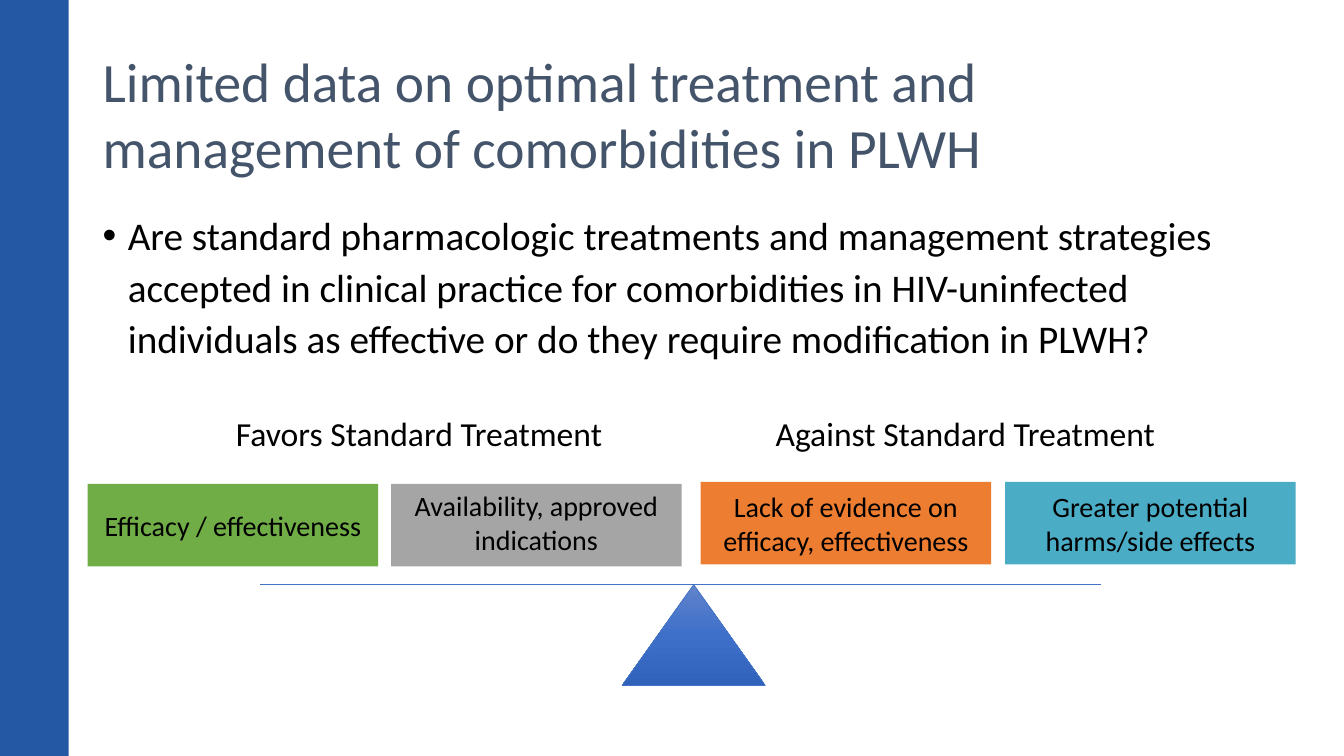
import copy

import pptx
import pptx.util
import pptx.dml.color
import pptx.enum.shapes
import pptx.enum.text
import pptx.oxml.ns
from lxml import etree

PX = 9144  # 100 px to the inch
SHAPES = pptx.enum.shapes.MSO_SHAPE
ANCHOR = pptx.enum.text.MSO_ANCHOR
ALIGN = pptx.enum.text.PP_ALIGN

LABELS = [
    ("Favors Standard Treatment", 178, 475),
    ("Against Standard Treatment", 714, 487),
]
BOXES = [
    ("Efficacy / effectiveness", 87, 480, "70AD47", ANCHOR.MIDDLE),
    ("Availability, approved indications", 388, 480, "A5A5A5", ANCHOR.TOP),
    ("Lack of evidence on efficacy, effectiveness", 695, 478, "ED7D31", ANCHOR.MIDDLE),
    ("Greater potential harms/side effects", 997, 478, "4BACC6", ANCHOR.MIDDLE),
]
STOPS = [(0, "6183CB"), (0.5, "3E70CA"), (1, "3062BB")]


def px(*vals):
    return [pptx.util.Emu(val * PX) for val in vals]


def rgb(code):
    return pptx.dml.color.RGBColor.from_string(code)


def write(shape, text, size, color="000000", align=ALIGN.CENTER, anchor=ANCHOR.TOP):
    frame = shape.text_frame
    frame.word_wrap = True
    frame.vertical_anchor = anchor
    para = frame.paragraphs[0]
    para.alignment = align
    run = para.add_run()
    run.text = text
    run.font.name = "Calibri"
    run.font.size = pptx.util.Pt(size)
    run.font.color.rgb = rgb(color)
    return para


def label(slide, text, at, size, **style):
    return write(slide.shapes.add_textbox(*px(*at)), text, size, **style)


def block(slide, kind, at, fill):
    shape = slide.shapes.add_shape(kind, *px(*at))
    shape.shadow.inherit = False
    shape.fill.solid()
    shape.fill.fore_color.rgb = rgb(fill)
    shape.line.fill.background()
    return shape


def bullet(para, indent):
    props = para._p.get_or_add_pPr()
    props.set("marL", str(indent * PX))
    props.set("indent", str(-indent * PX))
    qn = pptx.oxml.ns.qn
    etree.SubElement(props, qn("a:buFont")).set("typeface", "Arial")
    etree.SubElement(props, qn("a:buChar")).set("char", "•")


def blend(shape, stops):
    shape.fill.gradient()
    shape.fill.gradient_angle = 270
    # The default gradient has two stops, so add the third
    first = shape._element.spPr.find(".//" + pptx.oxml.ns.qn("a:gs"))
    first.addnext(copy.deepcopy(first))
    for stop, (pos, color) in zip(shape.fill.gradient_stops, stops):
        stop.position = pos
        stop.color.rgb = rgb(color)


def beam(slide, left, right, top, color):
    kind = pptx.enum.shapes.MSO_CONNECTOR.STRAIGHT
    line = slide.shapes.add_connector(kind, *px(left, top, right, top))
    line.line.color.rgb = rgb(color)
    line.line.width = pptx.util.Pt(1)
    etree.SubElement(line._element.spPr, pptx.oxml.ns.qn("a:effectLst"))


def main():
    deck = pptx.Presentation()
    deck.slide_width, deck.slide_height = px(1333, 750)
    slide = deck.slides.add_slide(deck.slide_layouts[6])

    # Side band and title
    block(slide, SHAPES.RECTANGLE, (0, 0, 68, 750), "2458A5")
    label(slide, "Limited data on optimal treatment and management of comorbidities in PLWH",
          (92, 40, 1150, 145), 39.6, color="44546A", align=ALIGN.LEFT, anchor=ANCHOR.MIDDLE)

    # Question
    para = label(slide, "Are standard pharmacologic treatments and management strategies "
                 "accepted in clinical practice for comorbidities in HIV-uninfected "
                 "individuals as effective or do they require modification in PLWH?",
                 (92, 200, 1150, 476), 28, align=ALIGN.LEFT)
    para.line_spacing = 1.1
    para.space_before = pptx.util.Pt(10)
    para.space_after = pptx.util.Pt(6)
    bullet(para, 25)

    # Arguments on each side
    for text, left, width in LABELS:
        label(slide, text, (left, 405, width, 50), 24)
    for text, left, top, fill, anchor in BOXES:
        box = block(slide, SHAPES.RECTANGLE, (left, top, 288, 82), fill)
        write(box, text, 20, anchor=anchor)

    # Balance
    beam(slide, 258, 1092, 580, "4472C4")
    pivot = block(slide, SHAPES.ISOSCELES_TRIANGLE, (617, 580, 142, 100), "3E70CA")
    blend(pivot, STOPS)
    pivot.line.color.rgb = rgb("4472C4")
    pivot.line.width = pptx.util.Pt(0.5)

    deck.save("out.pptx")


if __name__ == "__main__":
    main()
